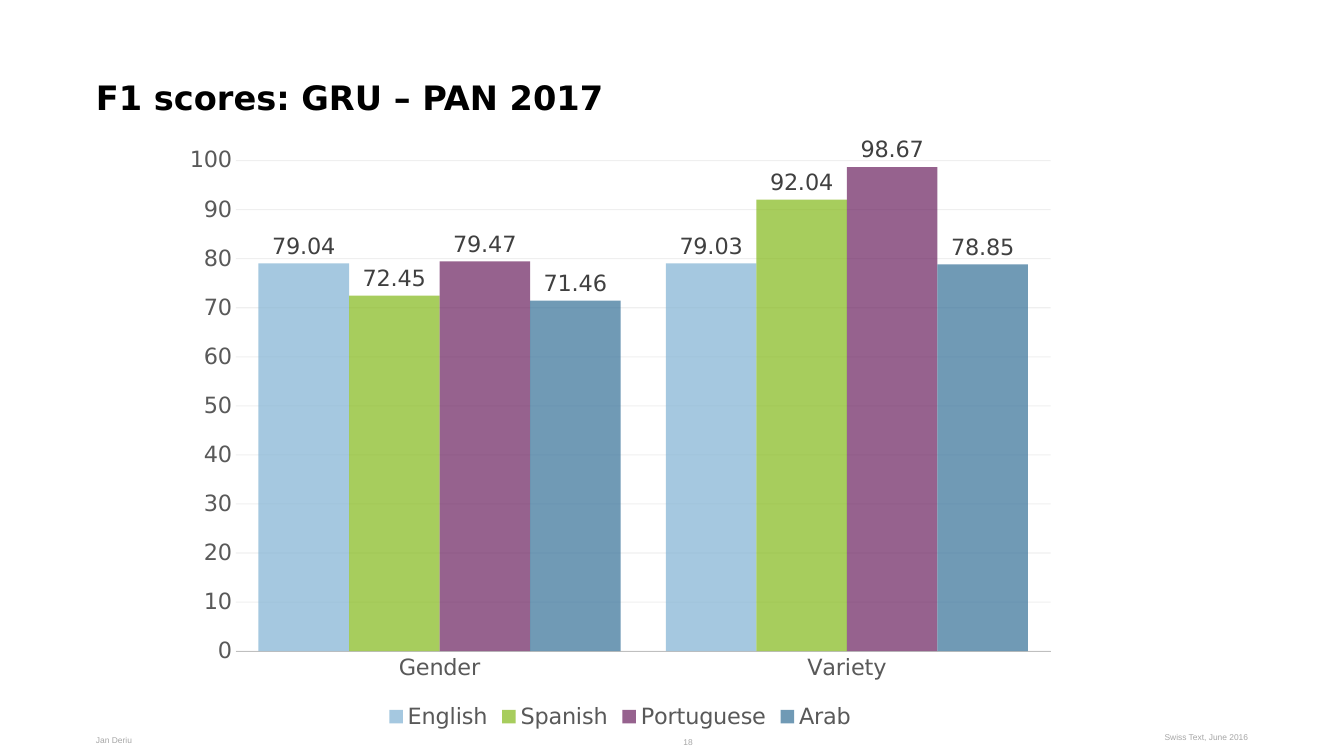
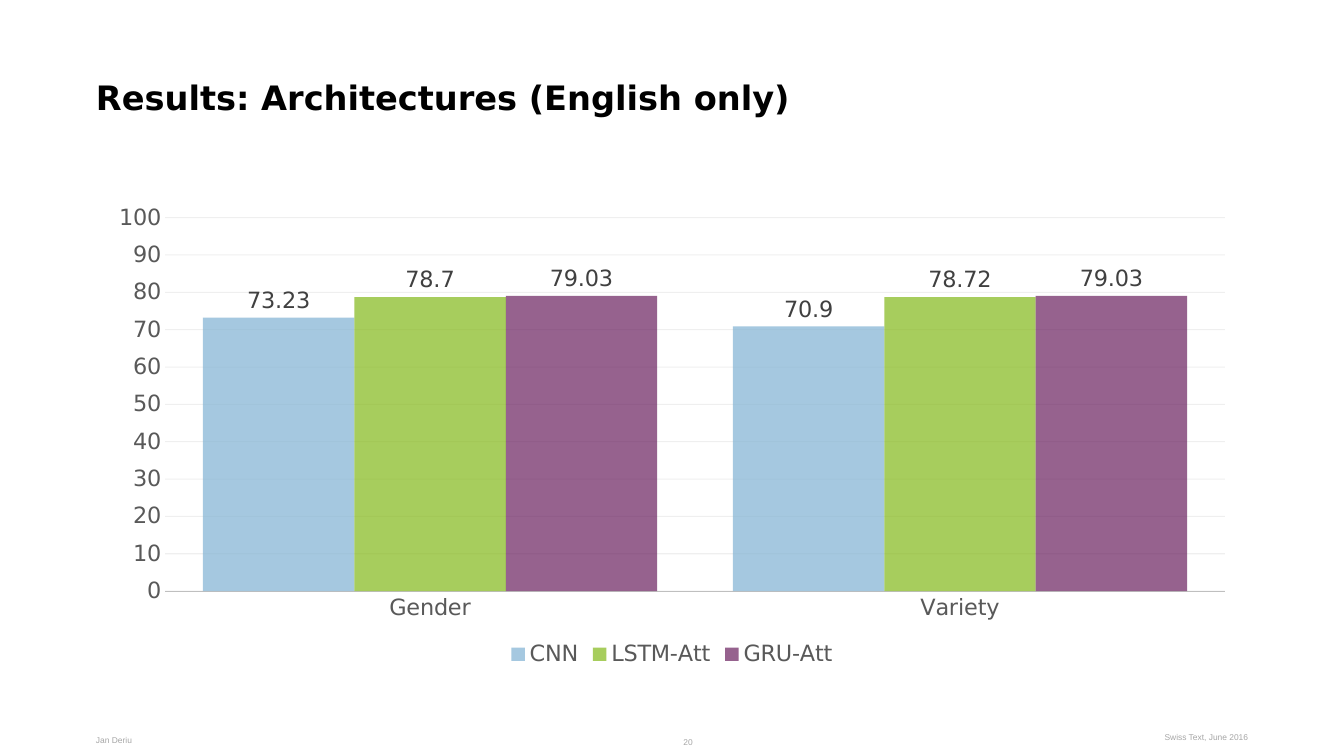
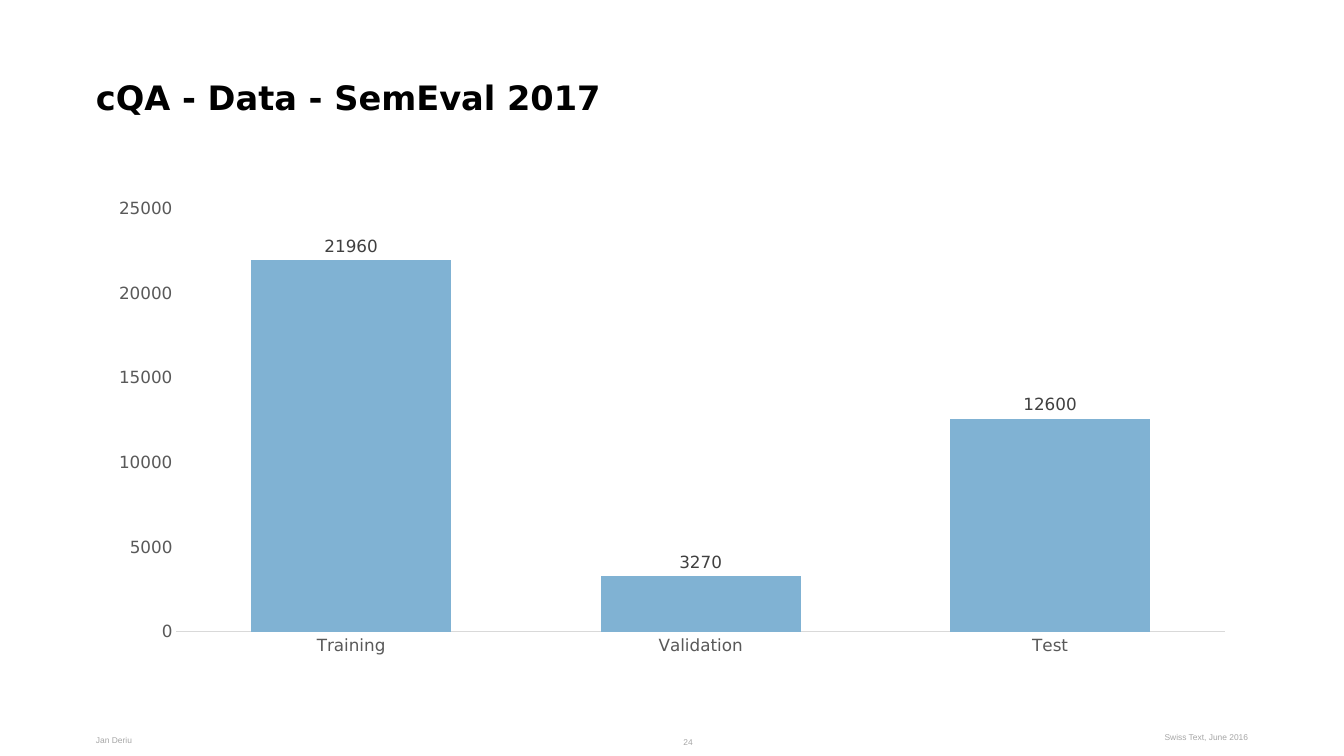
from dataclasses import dataclass

from pptx import Presentation
from pptx.chart.data import CategoryChartData
from pptx.dml.color import RGBColor as RGB
from pptx.enum.chart import XL_CHART_TYPE as CT, XL_LABEL_POSITION as LP
from pptx.enum.chart import XL_LEGEND_POSITION as LEG, XL_TICK_MARK as TICK
from pptx.enum.text import PP_ALIGN as AL
from pptx.oxml.ns import qn
from pptx.util import Inches, Pt


@dataclass(frozen=True)
class Theme:
    title_font: str = "DejaVu Sans"
    footer_font: str = "Arial"
    title_size: int = 24
    footer_size: int = 6
    black: str = "000000"
    footer: str = "A6A6A6"
    axis_text: str = "595959"
    label_text: str = "404040"
    grid: str = "D9D9D9"
    series: tuple = ("80B2D3", "83B819", "6A205F", "347097")


T = Theme()

# Grid: 14 columns by 15 rows, one column of margin on each side
prs = Presentation()
prs.slide_width, prs.slide_height = Inches(13.33), Inches(7.5)
COL, ROW = prs.slide_width / 14, prs.slide_height / 15


def add_text(s, cell, text, font, size, color, align=AL.LEFT, inset=0.0):
    col, row, cols, rows = cell
    tf = s.shapes.add_textbox(int(col * COL), int(row * ROW),
                              int(cols * COL), int(rows * ROW)).text_frame
    tf.word_wrap = True
    tf.margin_left = tf.margin_right = Inches(inset)
    tf.margin_top = tf.margin_bottom = Inches(inset / 2)
    p = tf.paragraphs[0]
    p.text, p.alignment = text, align
    p.font.name, p.font.size = font, Pt(size)
    p.font.color.rgb = RGB.from_string(color)
    return p


def set_color(fill, color, opacity=100):
    fill.solid()
    fill.fore_color.rgb = RGB.from_string(color)
    if opacity < 100:
        clr = next(fill._xPr.iter(qn("a:srgbClr")))
        clr.makeelement(qn("a:alpha"))
        alpha = clr.makeelement(qn("a:alpha"), {"val": str(opacity * 1000)})
        clr.append(alpha)


# Slide content; a percentage chart has a 0-100 scale, gridlines and a legend
SLIDES = [
    dict(number=18, title="F1 scores: GRU – PAN 2017", cell=(1.79, 2.7, 9.34, 11.86),
         percent=True, size=16, gap=50, axis="BFBFBF", cats=("Gender", "Variety"),
         series={"English": (79.04, 79.03), "Spanish": (72.45, 92.04),
                 "Portuguese": (79.47, 98.67), "Arab": (71.46, 78.85)}),
    dict(number=20, title="Results: Architectures (English only)", cell=(1, 3.88, 12, 9.44),
         percent=True, size=16, gap=50, axis="BFBFBF", cats=("Gender", "Variety"),
         series={"CNN": (73.23, 70.9), "LSTM-Att": (78.7, 78.72),
                 "GRU-Att": (79.03, 79.03)}),
    dict(number=24, title="cQA - Data - SemEval 2017", cell=(1, 3.76, 12, 9.44),
         percent=False, size=12, gap=75, axis="D9D9D9",
         cats=("Training", "Validation", "Test"),
         series={"Series 1": (21960, 3270, 12600)}),
]

for d in SLIDES:
    s = prs.slides.add_slide(prs.slide_layouts[6])

    # Footer and title
    small = (T.footer_font, T.footer_size, T.footer)
    add_text(s, (5.78, 14.52, 1.54, 0.38), str(d["number"]), *small, AL.RIGHT, 0.1)
    add_text(s, (11.66, 14.52, 1.34, 0.48), "Swiss Text, June 2016", *small, AL.RIGHT)
    add_text(s, (1, 14.58, 1.34, 0.48), "Jan Deriu", *small)
    p = add_text(s, (1, 1.52, 9.77, 1.7), d["title"], T.title_font, T.title_size, T.black)
    p.font.bold = True

    # Chart
    data = CategoryChartData()
    data.categories = d["cats"]
    for name, values in d["series"].items():
        data.add_series(name, values)
    col, row, cols, rows = d["cell"]
    chart = s.shapes.add_chart(CT.COLUMN_CLUSTERED, int(col * COL), int(row * ROW),
                               int(cols * COL), int(rows * ROW), data).chart
    chart.has_title = False
    chart.has_legend = d["percent"]
    fonts = [(chart.font, T.axis_text)]

    # Axes
    cat, val = chart.category_axis, chart.value_axis
    for ax in (cat, val):
        ax.major_tick_mark = ax.minor_tick_mark = TICK.NONE
        fonts.append((ax.tick_labels.font, T.axis_text))
    cat.format.line.width = Pt(0.75)
    set_color(cat.format.line.fill, d["axis"])
    val.format.line.fill.background()
    val.minimum_scale = 0
    val.has_major_gridlines = d["percent"]
    if d["percent"]:
        val.maximum_scale, val.major_unit = 100, 10
        line = val.major_gridlines.format.line
        line.width = Pt(0.75)
        set_color(line.fill, T.grid, 40)
        chart.legend.position = LEG.BOTTOM
        chart.legend.include_in_layout = False
        fonts.append((chart.legend.font, T.axis_text))

    # Columns and their labels
    plot = chart.plots[0]
    plot.gap_width, plot.overlap, plot.vary_by_categories = d["gap"], 0, False
    for ser, color in zip(plot.series, T.series):
        set_color(ser.format.fill, color, 70 if d["percent"] else 100)
        ser.invert_if_negative = False
        labels = ser.data_labels
        labels.show_value, labels.position = True, LP.OUTSIDE_END
        fonts.append((labels.font, T.label_text))
    for font, color in fonts:
        font.name, font.size = T.title_font, Pt(d["size"])
        font.color.rgb = RGB.from_string(color)

prs.save("out.pptx")
